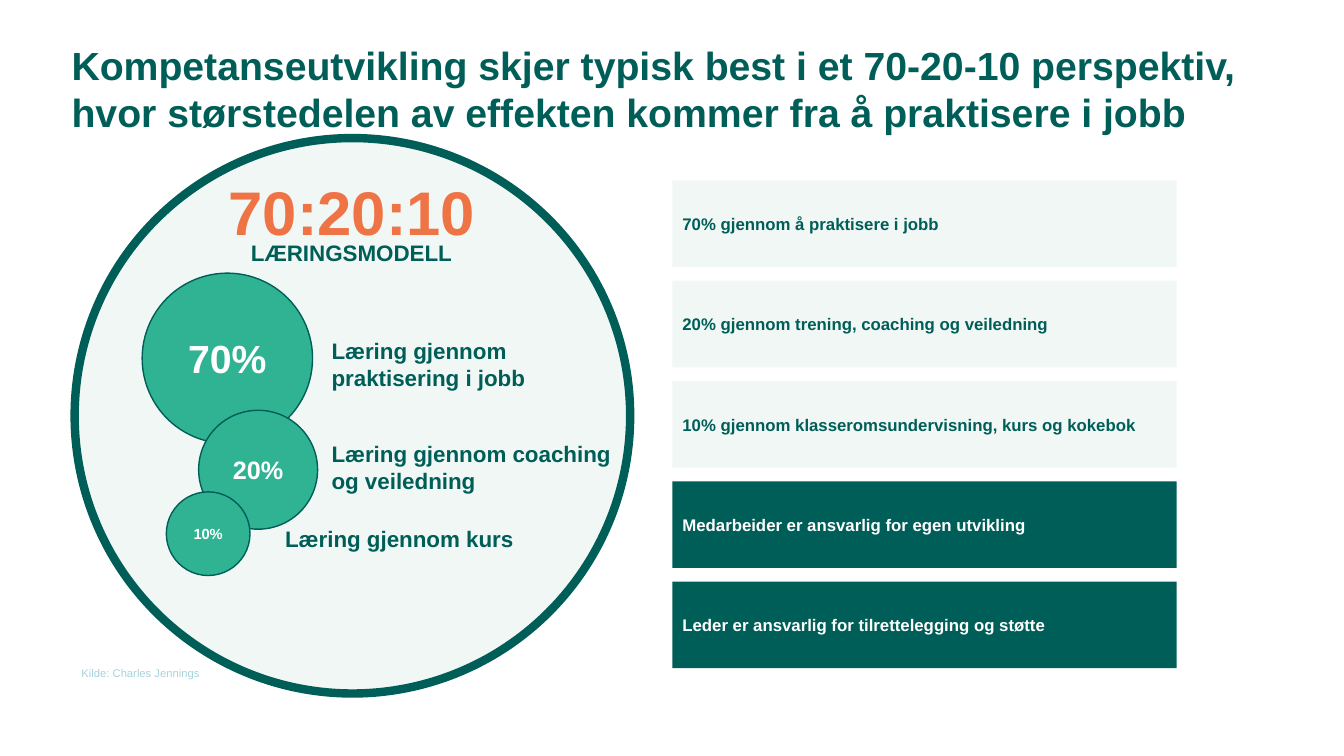
from pptx import Presentation
from pptx.dml.color import RGBColor
from pptx.enum.shapes import MSO_SHAPE
from pptx.enum.text import MSO_ANCHOR, MSO_AUTO_SIZE, PP_ALIGN
from pptx.util import Inches, Pt

GREEN, MINT, PALE = "005E58", "30B393", "F1F7F5"
WHITE, CORAL, SKY = "FFFFFF", "EF7445", "A6D3DD"


def color(code):
    return RGBColor.from_string(code)


class Board:
    font = "Arial"

    def __init__(self, slide):
        self.slide = slide

    def letter(self, shape, words, size, ink, bold=True, align=PP_ALIGN.LEFT, **frame):
        text = shape.text_frame
        for key, value in {"word_wrap": True, **frame}.items():
            setattr(text, key, value)
        para = text.paragraphs[0]
        para.text = words
        para.alignment = align
        style = {"name": self.font, "size": Pt(size), "bold": bold}
        for key, value in style.items():
            setattr(para.font, key, value)
        para.font.color.rgb = color(ink)

    def label(self, words, place, size, ink=GREEN, **style):
        box = self.slide.shapes.add_textbox(*map(Inches, place))
        self.letter(box, words, size, ink, **style)

    def shape(self, kind, place, fill, line=None):
        item = self.slide.shapes.add_shape(kind, *map(Inches, place))
        item.shadow.inherit = False
        item.fill.solid()
        item.fill.fore_color.rgb = color(fill)
        if line:
            item.line.color.rgb = color(GREEN)
            item.line.width = Pt(line)
        else:
            item.line.fill.background()
        return item

    def bar(self, words, top, fill, ink):
        item = self.shape(MSO_SHAPE.RECTANGLE, (6.67, top, 5, 0.86), fill)
        self.letter(item, words, 12, ink, vertical_anchor=MSO_ANCHOR.MIDDLE)

    def disc(self, left, top, width, fill, line):
        place = (left, top, width, width)
        return self.shape(MSO_SHAPE.FLOWCHART_CONNECTOR, place, fill, line)

    def share(self, words, left, top, width, size):
        item = self.disc(left, top, width, MINT, 1)
        self.letter(item, words, size, WHITE, align=PP_ALIGN.CENTER,
                    vertical_anchor=MSO_ANCHOR.MIDDLE)


def main():
    deck = Presentation()
    deck.slide_width, deck.slide_height = Inches(13.33), Inches(7.5)
    board = Board(deck.slides.add_slide(deck.slide_layouts[6]))

    sides = ("left", "top", "right", "bottom")
    board.label(
        "Kompetanseutvikling skjer typisk best i et 70-20-10 perspektiv, "
        "hvor størstedelen av effekten kommer fra å praktisere i jobb",
        (0.71, 0.33, 11.88, 1.01), 28, vertical_anchor=MSO_ANCHOR.BOTTOM,
        **{f"margin_{side}": 0 for side in sides})

    bars = [
        ("70% gjennom å praktisere i jobb", PALE, GREEN),
        ("20% gjennom trening, coaching og veiledning", PALE, GREEN),
        ("10% gjennom klasseromsundervisning, kurs og kokebok", PALE, GREEN),
        ("Medarbeider er ansvarlig for egen utvikling", GREEN, WHITE),
        ("Leder er ansvarlig for tilrettelegging og støtte", GREEN, WHITE),
    ]
    pitch = (5.77 - 1.79) / (len(bars) - 1)
    for row, (words, fill, ink) in enumerate(bars):
        board.bar(words, 1.79 + row * pitch, fill, ink)

    board.label("Kilde: Charles Jennings", (0.71, 6.56, 4.44, 0.31), 8, SKY, bold=False)

    board.disc(0.74, 1.37, 5.51, PALE, 6)
    shares = [
        ("70%", 1.41, 2.71, 1.69, 28),
        ("20%", 1.97, 4.07, 1.18, 18),
        ("10%", 1.65, 4.88, 0.83, 10.5),
    ]
    for share in shares:
        board.share(*share)

    labels = [
        ("Læring gjennom praktisering i jobb", (3.19, 3.3, 3.14, 0.64), 16, GREEN),
        ("Læring gjennom coaching og veiledning", (3.19, 4.32, 3.14, 0.64), 16, GREEN),
        ("Læring gjennom kurs", (2.73, 5.16, 3.14, 0.37), 16, GREEN),
        ("70:20:10", (2.17, 1.68, 3.14, 0.84), 44, CORAL),
        ("LÆRINGSMODELL", (2.39, 2.32, 2.21, 0.37), 16, GREEN),
    ]
    for label in labels:
        board.label(*label, auto_size=MSO_AUTO_SIZE.SHAPE_TO_FIT_TEXT)

    deck.save("out.pptx")


if __name__ == "__main__":
    main()
